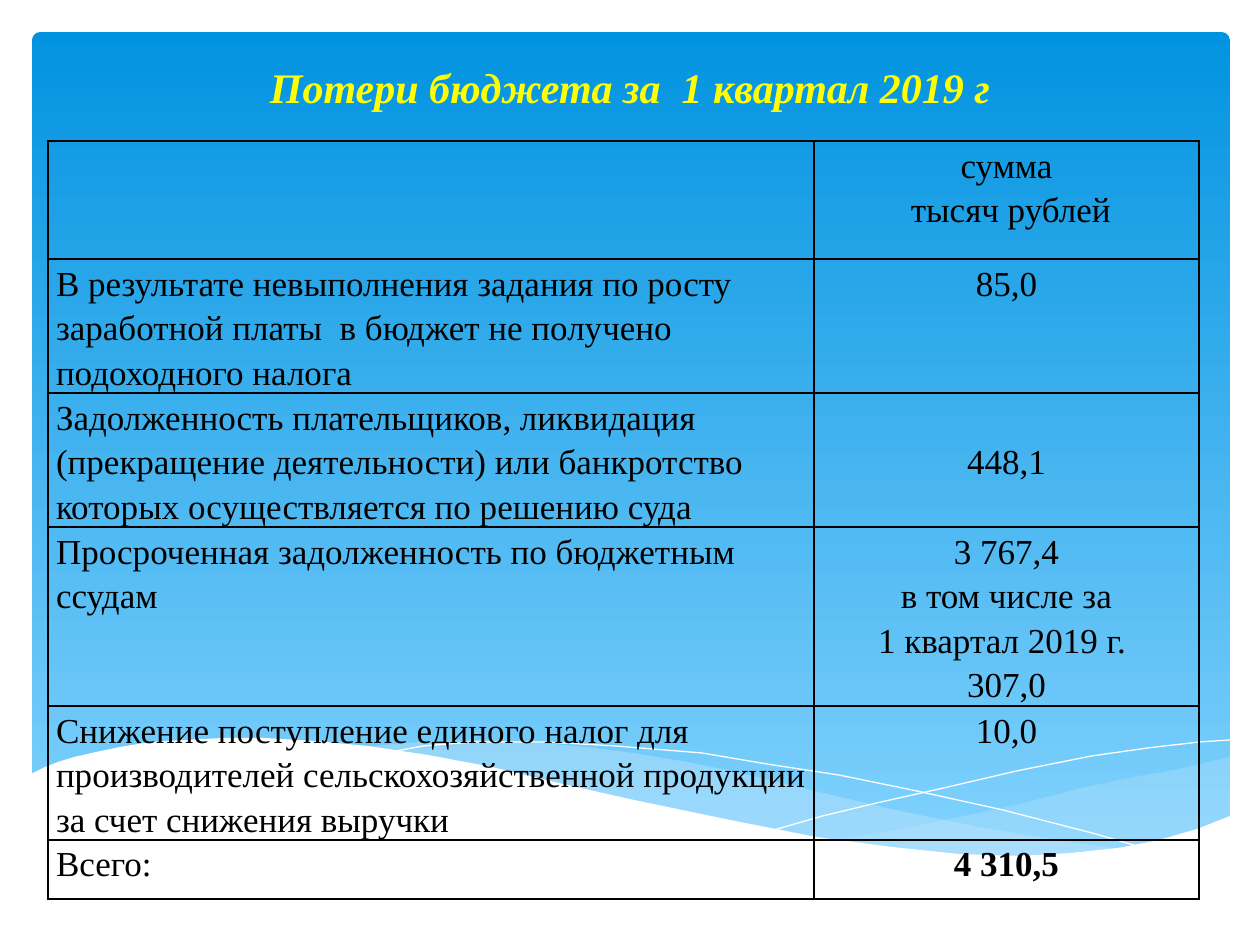
from lxml import etree
from pptx import Presentation
from pptx import util as u
from pptx.dml.color import RGBColor
from pptx.enum import shapes, text
from pptx.oxml import parse_xml
from pptx.oxml.ns import nsdecls, qn

PX = u.Inches(1) / 126
FONT = "Times New Roman"
C = {"top": "0293E0", "bottom": "83D3FE", "wave": "C6E7FC",
     "white": "FFFFFF", "title": "FFFF00", "text": "000000"}


def px(*values):
    return [u.Emu(round(v * PX)) for v in values]


def add_outline(points, color, alpha=None, closed=True):
    fb = s.shapes.build_freeform(*points[0], scale=PX)
    fb.add_line_segments(points[1:], close=closed)
    sp = fb.convert_to_shape()
    sp.shadow.inherit = False
    rgb = RGBColor.from_string(C[color])
    if not closed:
        sp.fill.background()
        sp.line.color.rgb = rgb
        sp.line.width = u.Pt(0)
        return
    sp.line.fill.background()
    sp.fill.solid()
    sp.fill.fore_color.rgb = rgb
    if alpha:
        clr = sp.element.spPr.find(qn("a:solidFill"))[0]
        etree.SubElement(clr, qn("a:alpha")).set("val", str(alpha * 1000))


prs = Presentation()
prs.slide_width, prs.slide_height = px(1260, 945)
s = prs.slides.add_slide(prs.slide_layouts[5])

sp = s.shapes.add_shape(shapes.MSO_SHAPE.ROUNDED_RECTANGLE, *px(32, 32, 1198, 832))
sp.adjustments[0] = 0.01
sp.shadow.inherit = False
sp.line.fill.background()
sp.fill.gradient()
sp.fill.gradient_angle = 270
for stop, pos, name in zip(sp.fill.gradient_stops, (0, 1), ("top", "bottom")):
    stop.position = pos
    stop.color.rgb = RGBColor.from_string(C[name])

right_wave = [
    (1230, 757), (1179, 769), (1124, 779), (1086, 787), (1016, 805), (950, 819),
    (891, 831), (834, 840), (872, 845), (924, 851), (970, 854), (1027, 857),
    (1078, 856), (1122, 852), (1162, 845), (1198, 835), (1230, 818)]
middle_wave = [
    (1126, 850), (1056, 840), (978, 827), (891, 809), (794, 786), (736, 772),
    (682, 761), (633, 753), (586, 747), (529, 742), (479, 740), (435, 741),
    (395, 744), (362, 747), (432, 757), (483, 767), (538, 779), (567, 786),
    (668, 809), (759, 828), (820, 839), (877, 847), (928, 853), (975, 857),
    (1032, 857), (1082, 855)]
falling_line = [
    (391, 752), (423, 746), (472, 742), (546, 742), (616, 746), (702, 753),
    (767, 764), (839, 775), (917, 791), (1003, 810), (1096, 834), (1144, 848)]
rising_line = [
    (774, 830), (823, 816), (877, 803), (944, 788), (1017, 771), (1092, 756),
    (1148, 748), (1200, 742), (1230, 740)]
white_wave = [
    (1230, 816), (1197, 829), (1159, 840), (1118, 848), (1071, 853), (1019, 856),
    (959, 854), (892, 847), (816, 837), (730, 820), (634, 800), (563, 784),
    (492, 767), (428, 755), (368, 746), (315, 741), (266, 738), (223, 738),
    (184, 740), (150, 742), (120, 747), (96, 752), (74, 757), (58, 762),
    (45, 767), (29, 775), (29, 921), (1230, 921)]

add_outline(right_wave, "wave", alpha=29)
add_outline(middle_wave, "wave", alpha=40)
add_outline(falling_line, "white", closed=False)
add_outline(rising_line, "white", closed=False)
add_outline(white_wave, "white")

title = s.shapes.title
title.element.getparent().append(title.element)
title.left, title.top, title.width, title.height = px(0, 55, 1260, 110)
tf = title.text_frame
tf.text = "Потери бюджета за  1 квартал 2019 г"
tf.vertical_anchor = text.MSO_ANCHOR.TOP
p = tf.paragraphs[0]
p.alignment = text.PP_ALIGN.CENTER
f = p.runs[0].font
f.name, f.size, f.bold, f.italic = FONT, u.Pt(24), True, True
f.color.rgb = RGBColor.from_string(C["title"])

rows = [
    (118, "", "сумма\n тысяч рублей"),
    (134, "В результате невыполнения задания по росту заработной платы  в бюджет "
          "не получено подоходного налога", "85,0"),
    (134, "Задолженность плательщиков, ликвидация (прекращение деятельности) или "
          "банкротство которых осуществляется по решению суда", "448,1"),
    (179, "Просроченная задолженность по бюджетным ссудам",
     "3 767,4\n в том числе за \n1 квартал 2019 г. \n307,0"),
    (134, "Снижение поступление единого налог для производителей "
          "сельскохозяйственной продукции за счет снижения выручки", "10,0"),
    (59, "Всего:", "4 310,5"),
]
widths = (766, 385)
height = sum(row[0] for row in rows)
tbl = s.shapes.add_table(len(rows), 2, *px(48, 141, sum(widths), height)).table
tbl.first_row = tbl.horz_banding = False
for col, width in zip(tbl.columns, widths):
    col.width = px(width)[0]

for i, (row_height, *words) in enumerate(rows):
    tbl.rows[i].height = px(row_height)[0]
    for j, word in enumerate(words):
        cell = tbl.cell(i, j)
        cell.text = word
        cell.fill.background()
        cell.margin_left, cell.margin_right, cell.margin_top, cell.margin_bottom = px(8, 8, 0, 0)
        if word == "448,1":
            cell.vertical_anchor = text.MSO_ANCHOR.MIDDLE
        for p in cell.text_frame.paragraphs:
            p.line_spacing = 1.15
            p.alignment = text.PP_ALIGN.CENTER if j else text.PP_ALIGN.LEFT
            for r in p.runs:
                r.font.name, r.font.size = FONT, u.Pt(20)
                r.font.bold = word == "4 310,5"
                r.font.color.rgb = RGBColor.from_string(C["text"])
        tcPr = cell._tc.get_or_add_tcPr()
        for n, side in enumerate("LRTB"):
            tcPr.insert(n, parse_xml(
                f'<a:ln{side} {nsdecls("a")} w="12700"><a:solidFill>'
                f'<a:srgbClr val="{C["text"]}"/></a:solidFill></a:ln{side}>'))

prs.save("out.pptx")
